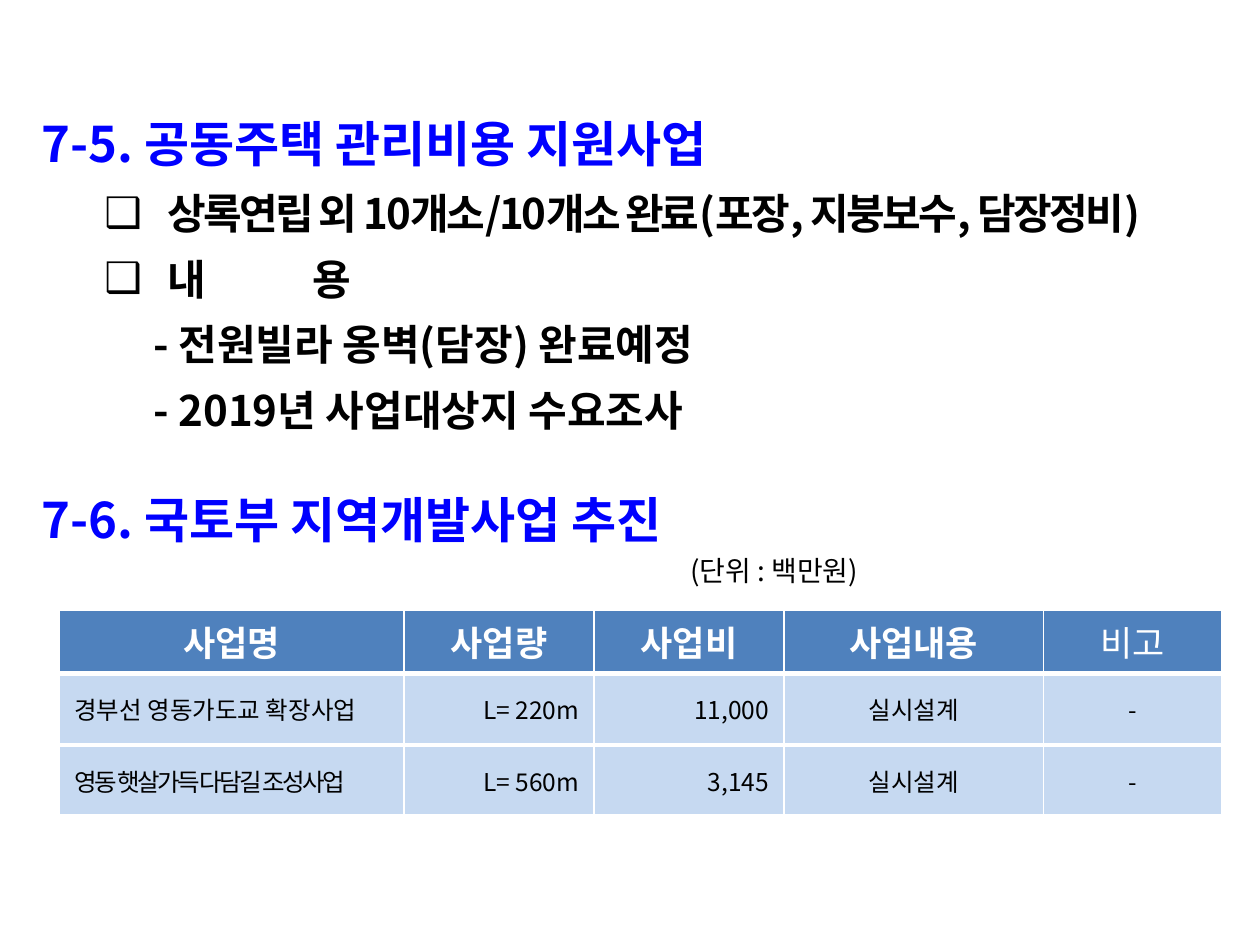
from pptx import Presentation
from pptx.dml.color import RGBColor
from pptx.enum.text import MSO_ANCHOR, MSO_AUTO_SIZE, PP_ALIGN
from pptx.oxml.ns import qn
from pptx.util import Pt
from lxml.etree import SubElement

FONT = "Noto Sans CJK KR"
COLORS = {"heading": "0000FF", "text": "000000", "header": "4F81BD",
          "row": "C6D9F1", "white": "FFFFFF"}

HEADING = "7-5. 공동주택 관리비용 지원사업"
ITEMS = [
    ("❑", "상록연립 외 10개소/10개소 완료(포장, 지붕보수, 담장정비)", -1.5),
    ("❑", "내\t용", 0),
    ("", "- 전원빌라 옹벽(담장) 완료예정", 0),
    ("", "- 2019년 사업대상지 수요조사", 0),
]
SECOND_HEADING = "7-6. 국토부 지역개발사업 추진"
UNIT = "(단위 : 백만원)"
COLUMNS = [
    ("사업명", 197, PP_ALIGN.LEFT),
    ("사업량", 108.5, PP_ALIGN.RIGHT),
    ("사업비", 108.5, PP_ALIGN.RIGHT),
    ("사업내용", 148.5, PP_ALIGN.CENTER),
    ("비고", 101.5, PP_ALIGN.CENTER),
]
PROJECTS = [
    ("경부선 영동가도교 확장사업", "L= 220m", "11,000", "실시설계", "-"),
    ("영동 햇살가득 다담길 조성사업", "L= 560m", "3,145", "실시설계", "-"),
]
TIGHT_TEXT = PROJECTS[1][0]
HEADER_HEIGHT, ROW_HEIGHT = 33, 41


def style(para, size, color, bold=False, spacing=0):
    for span in para.runs:
        span.font.size = Pt(size)
        span.font.bold = bold
        span.font.name = FONT
        span.font.color.rgb = RGBColor.from_string(COLORS[color])
        properties = span.font._element
        SubElement(properties, qn("a:ea"), typeface=FONT)
        if spacing:
            properties.set("spc", str(int(spacing * 100)))


def place(shape, left, top, width, height):
    shape.left, shape.top = Pt(left), Pt(top)
    shape.width, shape.height = Pt(width), Pt(height)
    frame = shape.text_frame
    frame.word_wrap = True
    frame.auto_size = MSO_AUTO_SIZE.NONE
    frame.vertical_anchor = MSO_ANCHOR.TOP
    return frame


def indent(para, left, first=0):
    properties = para._p.get_or_add_pPr()
    properties.set("marL", str(Pt(left)))
    properties.set("indent", str(Pt(first)))
    return properties


def add_bullet(properties, bullet):
    if bullet:
        color = SubElement(properties, qn("a:buClr"))
        SubElement(color, qn("a:srgbClr"), val=COLORS["text"])
        SubElement(properties, qn("a:buChar"), char=bullet)
    else:
        SubElement(properties, qn("a:buNone"))


def add_borders(cell, bottom):
    properties = cell._tc.get_or_add_tcPr()
    for side, width in (("L", 1), ("R", 1), ("T", 1), ("B", bottom)):
        line = SubElement(properties, qn(f"a:ln{side}"), w=str(Pt(width)))
        fill = SubElement(line, qn("a:solidFill"))
        SubElement(fill, qn("a:srgbClr"), val=COLORS["white"])


def add_list(body):
    frame = place(body, 16.5, 95, 703.5, 157)
    frame.margin_right = 0
    for index, (bullet, text, spacing) in enumerate(ITEMS):
        para = frame.paragraphs[0] if index == 0 else frame.add_paragraph()
        para.text = text
        para.level = 1
        para.line_spacing = 1.3
        para.space_before = Pt(0)
        properties = indent(para, 72, -36) if bullet else indent(para, 64)
        add_bullet(properties, bullet)
        if "\t" in text:
            tabs = SubElement(properties, qn("a:tabLst"))
            SubElement(tabs, qn("a:tab"), pos=str(Pt(155)), algn="l")
        style(para, 24, "text", True, spacing)


def add_project_table(slide):
    height = HEADER_HEIGHT + ROW_HEIGHT * len(PROJECTS)
    table = slide.shapes.add_table(
        len(PROJECTS) + 1, len(COLUMNS), Pt(34), Pt(348.5),
        Pt(sum(width for _, width, _ in COLUMNS)), Pt(height)).table
    for row in table.rows:
        row.height = Pt(ROW_HEIGHT)
    table.rows[0].height = Pt(HEADER_HEIGHT)
    for column, (name, width, alignment) in enumerate(COLUMNS):
        table.columns[column].width = Pt(width)
        texts = [name] + [project[column] for project in PROJECTS]
        for row, text in enumerate(texts):
            cell = table.cell(row, column)
            cell.text = text
            cell.vertical_anchor = MSO_ANCHOR.MIDDLE
            add_borders(cell, 3)
            cell.fill.solid()
            para = cell.text_frame.paragraphs[0]
            if row == 0:
                shade = "header"
                para.alignment = PP_ALIGN.CENTER
                style(para, 20, "white", name != "비고")
            else:
                shade = "row"
                cell.margin_left = cell.margin_right = Pt(8.5)
                para.alignment = alignment
                style(para, 14, "text", spacing=-1.5 if text == TIGHT_TEXT else 0)
            cell.fill.fore_color.rgb = RGBColor.from_string(COLORS[shade])


def main():
    deck = Presentation()
    deck.slide_width, deck.slide_height = Pt(720), Pt(540)
    slide = deck.slides.add_slide(deck.slide_layouts[1])

    title = place(slide.shapes.title, 16.5, 44.5, 686, 54)
    title.text = HEADING
    title.paragraphs[0].alignment = PP_ALIGN.LEFT
    title.paragraphs[0].line_spacing = 1.5
    style(title.paragraphs[0], 28, "heading", True)
    add_list(slide.placeholders[1])

    section = place(slide.shapes.add_textbox(0, 0, 0, 0), 16.5, 276, 680.5, 65)
    section.text = SECOND_HEADING
    style(section.paragraphs[0], 28, "heading", True)
    unit = section.add_paragraph()
    unit.text = UNIT
    unit.space_before = Pt(3)
    indent(unit, 371)
    style(unit, 16, "text")

    add_project_table(slide)
    deck.save("out.pptx")


if __name__ == "__main__":
    main()
